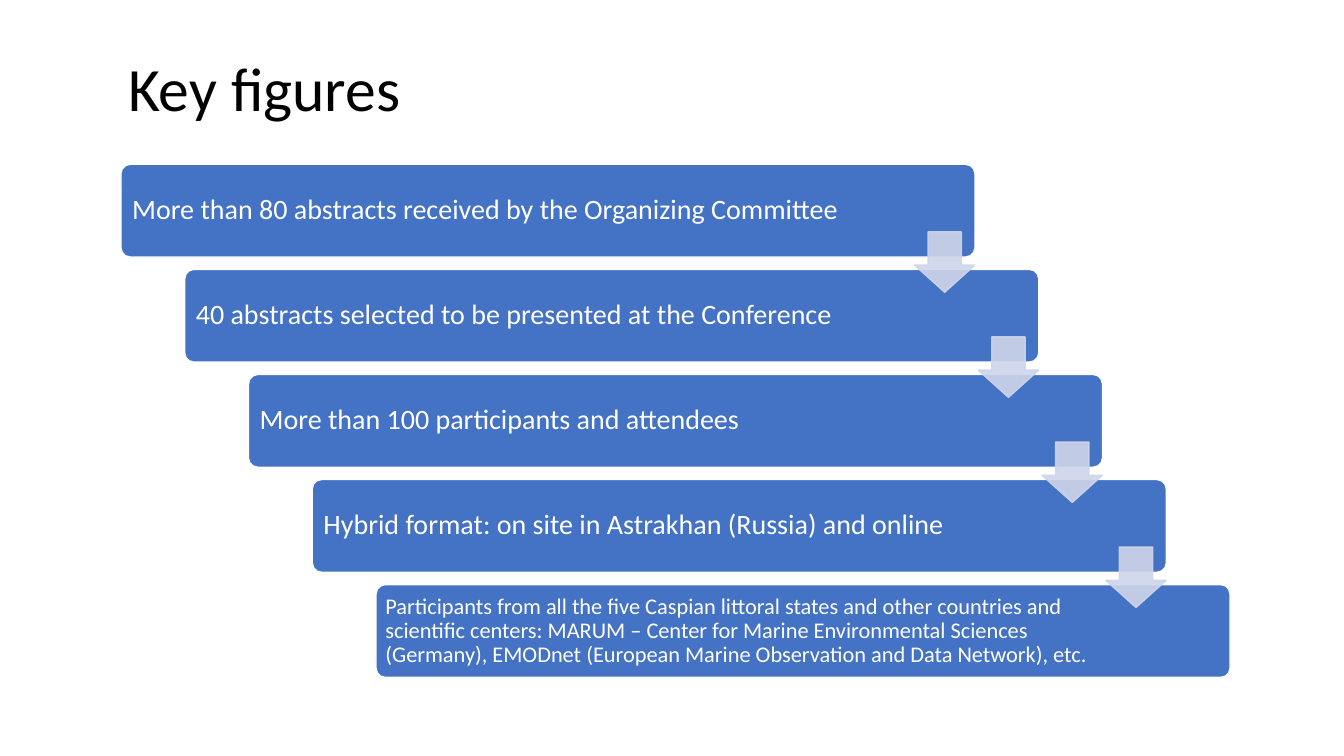
from dataclasses import dataclass

from lxml import etree
from pptx import Presentation
from pptx.dml.color import RGBColor
from pptx.enum.shapes import MSO_SHAPE
from pptx.enum.text import MSO_ANCHOR, MSO_AUTO_SIZE, PP_ALIGN
from pptx.oxml.ns import qn
from pptx.util import Inches, Pt

ROUNDED_BAR = MSO_SHAPE.ROUNDED_RECTANGLE
DOWN_ARROW = MSO_SHAPE.DOWN_ARROW
MIDDLE = MSO_ANCHOR.MIDDLE
NO_AUTOFIT = MSO_AUTO_SIZE.NONE
LEFT = PP_ALIGN.LEFT
TITLE_ONLY_LAYOUT = 5


@dataclass(frozen=True)
class Theme:
    font: str = "Calibri"
    black: RGBColor = RGBColor(0x00, 0x00, 0x00)
    white: RGBColor = RGBColor(0xFF, 0xFF, 0xFF)
    bar: RGBColor = RGBColor(0x44, 0x72, 0xC4)
    arrow: RGBColor = RGBColor(0xCF, 0xD5, 0xEA)
    arrow_opacity: int = 90
    title_size: int = 44
    step_size: int = 20
    detail_size: int = 16
    line_spacing: float = 0.9


THEME = Theme()

# Staircase area in inches; the bars share it from corner to corner
AREA_LEFT, AREA_TOP, AREA_WIDTH, AREA_HEIGHT = 1.2, 1.63, 11, 5.09
BAR_WIDTH, BAR_HEIGHT = 0.77 * AREA_WIDTH, 0.92
ARROW_SIZE = 0.6
ARROW_DROP = 0.67
TEXT_RIGHT_INSET = 1.3

STEPS = [
    ("More than 80 abstracts received by the Organizing Committee", THEME.step_size),
    ("40 abstracts selected to be presented at the Conference", THEME.step_size),
    ("More than 100 participants and attendees", THEME.step_size),
    ("Hybrid format: on site in Astrakhan (Russia) and online", THEME.step_size),
    ("Participants from all the five Caspian littoral states and other countries "
     "and scientific centers: MARUM – Center for Marine Environmental Sciences "
     "(Germany), EMODnet (European Marine Observation and Data Network), etc.",
     THEME.detail_size),
]


def write_text(shape, text, size, color):
    frame = shape.text_frame
    frame.word_wrap = True
    frame.auto_size = NO_AUTOFIT
    frame.vertical_anchor = MIDDLE
    paragraph = frame.paragraphs[0]
    paragraph.alignment = LEFT
    paragraph.line_spacing = THEME.line_spacing
    run = paragraph.add_run()
    run.text = text
    run.font.name = THEME.font
    run.font.size = Pt(size)
    run.font.color.rgb = color


def add_filled_shape(slide, kind, box, fill, line):
    shape = slide.shapes.add_shape(kind, *(Inches(length) for length in box))
    shape.shadow.inherit = False
    shape.fill.solid()
    shape.fill.fore_color.rgb = fill
    shape.line.color.rgb = line
    shape.line.width = Pt(1)
    return shape


def set_opacity(shape, percent):
    """Apply the opacity to both the fill and the outline."""
    for color in shape.element.spPr.iter(qn("a:srgbClr")):
        etree.SubElement(color, qn("a:alpha"), val=str(percent * 1000))


def step_corner(index):
    """Left and top of a bar on the evenly stepped staircase."""
    share = index / (len(STEPS) - 1)
    return (AREA_LEFT + share * (AREA_WIDTH - BAR_WIDTH),
            AREA_TOP + share * (AREA_HEIGHT - BAR_HEIGHT))


def add_title(slide, text):
    title = slide.shapes.title
    title.left, title.top = Inches(1.17), Inches(0.39)
    title.width, title.height = Inches(11), Inches(1.04)
    write_text(title, text, THEME.title_size, THEME.black)


def add_step(slide, index, text, size):
    box = (*step_corner(index), BAR_WIDTH, BAR_HEIGHT)
    bar = add_filled_shape(slide, ROUNDED_BAR, box, THEME.bar, THEME.white)
    bar.adjustments[0] = 0.1
    write_text(bar, text, size, THEME.white)
    frame = bar.text_frame
    # The inset grows with the type size
    frame.margin_left = frame.margin_top = frame.margin_bottom = Pt(size * 0.3)
    frame.margin_right = Inches(TEXT_RIGHT_INSET)


def add_step_arrow(slide, index):
    left, top = step_corner(index)
    box = (left + BAR_WIDTH - ARROW_SIZE, top + ARROW_DROP, ARROW_SIZE, ARROW_SIZE)
    arrow = add_filled_shape(slide, DOWN_ARROW, box, THEME.arrow, THEME.arrow)
    arrow.adjustments[0] = 0.55
    arrow.adjustments[1] = 0.45
    set_opacity(arrow, THEME.arrow_opacity)


def main():
    presentation = Presentation()
    presentation.slide_width = Inches(13.33)
    presentation.slide_height = Inches(7.5)
    layout = presentation.slide_layouts[TITLE_ONLY_LAYOUT]
    slide = presentation.slides.add_slide(layout)

    add_title(slide, "Key figures")

    # Bars first, so that the arrows lie on top of them
    for index, (text, size) in enumerate(STEPS):
        add_step(slide, index, text, size)
    for index in range(len(STEPS) - 1):
        add_step_arrow(slide, index)

    presentation.save("out.pptx")


if __name__ == "__main__":
    main()
